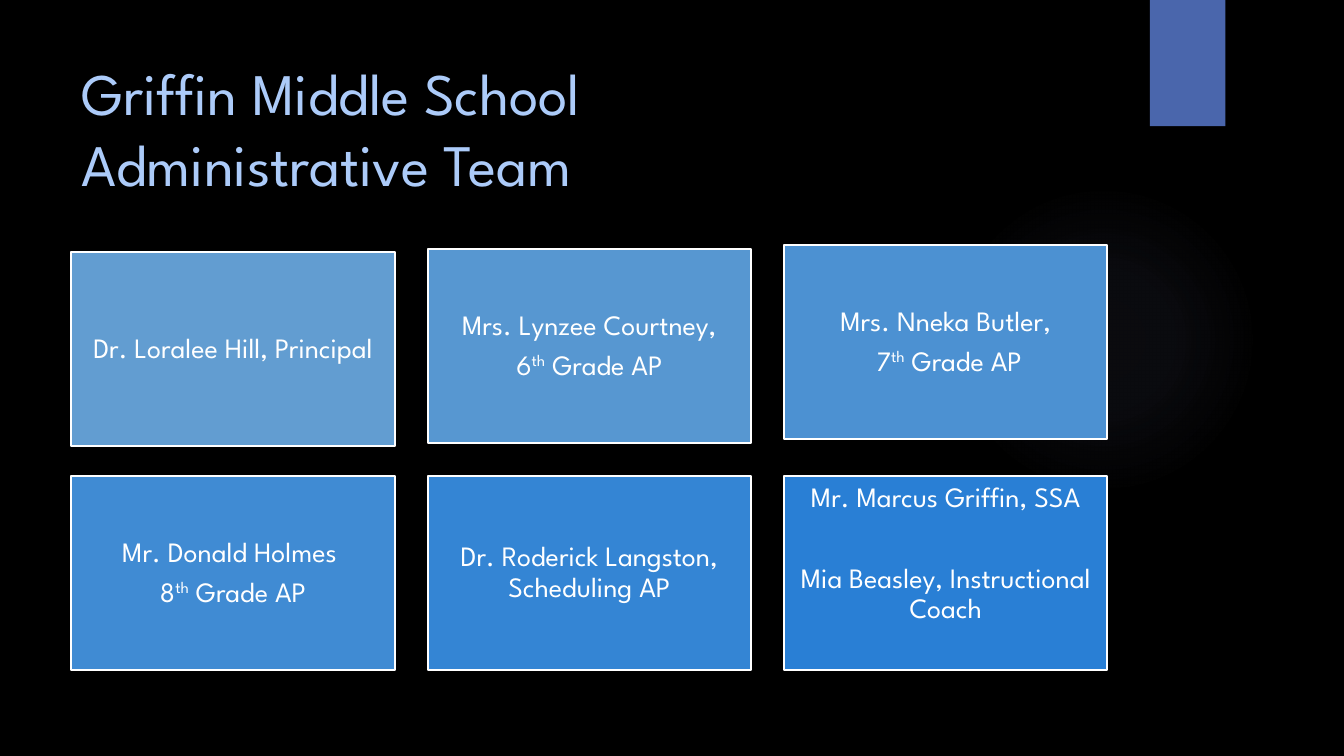
from dataclasses import dataclass

from lxml.etree import fromstring
from pptx import Presentation
from pptx.dml.color import RGBColor
from pptx.enum.shapes import MSO_SHAPE
from pptx.enum.text import MSO_ANCHOR, PP_ALIGN
from pptx.util import Cm, Pt


@dataclass(frozen=True)
class Theme:
    font: str = "League Spartan"
    background: str = "000000"
    title: str = "ACCBF9"
    text: str = "FFFFFF"
    accent: str = "4A66AC"
    glow: str = "9297CF"
    cards: tuple = ("629DD1", "5797D1", "4C91D2", "408BD3", "3485D4", "297FD5")
    title_size: int = 42
    card_size: int = 20
    card_gap: int = 7


class SlideBuilder:
    def __init__(self, page, theme):
        self.page = page
        self.theme = theme
        page.background.fill.solid()
        page.background.fill.fore_color.rgb = RGBColor.from_string(theme.background)

    def shape(self, kind, left, top, width, height, color):
        box = self.page.shapes.add_shape(
            kind, Cm(left), Cm(top), Cm(width), Cm(height))
        box.shadow.inherit = False
        box.fill.solid()
        box.fill.fore_color.rgb = RGBColor.from_string(color)
        box.line.fill.background()
        return box

    def span(self, para, text, size, color, raised=False):
        span = para.add_run()
        span.text = text
        span.font.name = self.theme.font
        span.font.size = Pt(size)
        span.font.color.rgb = RGBColor.from_string(color)
        if raised:
            span.font._element.set("baseline", "30000")

    def glow(self, left, top, size):
        box = self.shape(MSO_SHAPE.OVAL, left, top, size, size, self.theme.glow)
        stops = "".join(
            f'<a:gs pos="{place * 1000}"><a:srgbClr val="{self.theme.glow}">'
            f'<a:alpha val="{alpha * 1000}"/></a:srgbClr></a:gs>'
            for place, alpha in ((0, 7), (36, 6), (69, 0), (100, 0)))
        gradient = fromstring(
            '<a:gradFill xmlns:a="http://schemas.openxmlformats.org/drawingml/2006/main">'
            f'<a:gsLst>{stops}</a:gsLst><a:path path="circle">'
            '<a:fillToRect l="50000" t="50000" r="50000" b="50000"/></a:path></a:gradFill>')
        solid = box.fill._xPr.solidFill
        solid.getparent().replace(solid, gradient)

    def title(self, lines, left, top, width, height):
        box = self.page.shapes.add_textbox(Cm(left), Cm(top), Cm(width), Cm(height))
        frame = box.text_frame
        frame.word_wrap = True
        frame.vertical_anchor = MSO_ANCHOR.MIDDLE
        para = frame.paragraphs[0]
        for index, line in enumerate(lines):
            if index:
                para.add_line_break()
            self.span(para, line, self.theme.title_size, self.theme.title)

    def card(self, lines, left, top, width, height, color,
             gap, anchor=MSO_ANCHOR.MIDDLE):
        box = self.shape(MSO_SHAPE.RECTANGLE, left, top, width, height, color)
        box.line.color.rgb = RGBColor.from_string(self.theme.text)
        box.line.width = Pt(1.5)
        frame = box.text_frame
        frame.word_wrap = True
        frame.vertical_anchor = anchor
        frame.margin_left = frame.margin_right = Cm(0.2)
        frame.margin_top = frame.margin_bottom = Cm(0.2)
        for index, line in enumerate(lines):
            para = frame.add_paragraph() if index else frame.paragraphs[0]
            para.alignment = PP_ALIGN.CENTER
            para.line_spacing = 0.9
            para.space_after = Pt(gap)
            # Every second piece of a line is raised
            for part, text in enumerate(line):
                self.span(para, text, self.theme.card_size, self.theme.text,
                          raised=part % 2 == 1)


def grade(number):
    return (number, "th", " Grade AP")


TEAM = [
    [("Dr. Loralee Hill, Principal",)],
    [("Mrs. Lynzee Courtney,",), grade("6")],
    [("Mrs. Nneka Butler,",), grade(" 7")],
    [("Mr. Donald Holmes ",), grade("8")],
    [("Dr. Roderick Langston, Scheduling AP",)],
    [("Mr. Marcus Griffin, SSA",), ("Mia Beasley, Instructional Coach",)],
]
CARD_TOPS = (6.35, 6.27, 6.17, 11.99, 11.99, 11.99)
LEFT, COLUMN_STEP = 1.8, 8.98
CARD_WIDTH, CARD_HEIGHT = 8.15, 4.9


def main():
    deck = Presentation()
    deck.slide_width, deck.slide_height = Cm(33.87), Cm(19.05)
    theme = Theme()
    builder = SlideBuilder(deck.slides.add_slide(deck.slide_layouts[6]), theme)

    # Backdrop
    builder.glow(23.9, 4.65, 7.82)
    builder.shape(MSO_SHAPE.RECTANGLE, 28.98, 0, 1.9, 3.18, theme.accent)

    # Heading
    builder.title(("Griffin Middle School", "Administrative Team"),
                  LEFT, 1.27, 26.14, 3.89)

    # Team cards, three to a row; the last one holds two people set apart
    for index, (lines, top, color) in enumerate(zip(TEAM, CARD_TOPS, theme.cards)):
        shared = index == len(TEAM) - 1
        builder.card(lines, LEFT + index % 3 * COLUMN_STEP, top,
                     CARD_WIDTH, CARD_HEIGHT, color,
                     gap=36 if shared else theme.card_gap,
                     anchor=MSO_ANCHOR.TOP if shared else MSO_ANCHOR.MIDDLE)

    deck.save("out.pptx")


if __name__ == "__main__":
    main()
